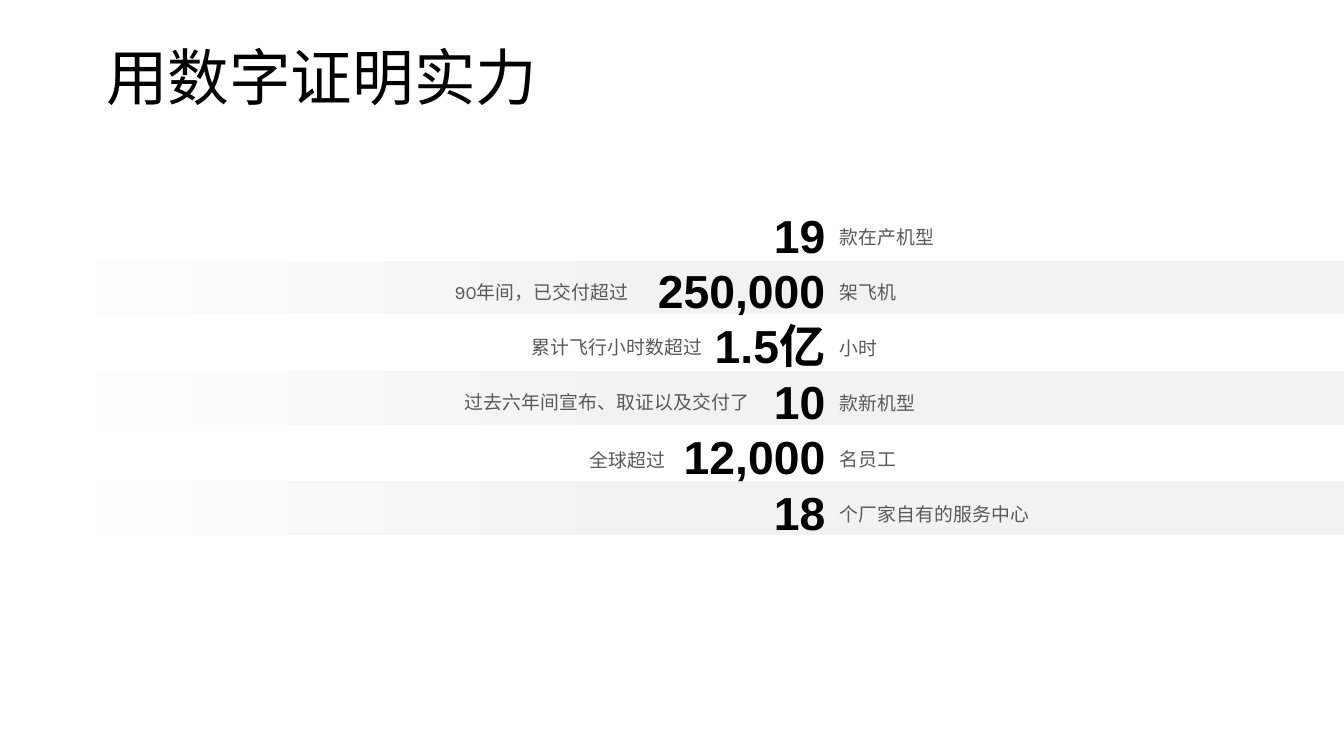
"""Build a slide of six key figures on alternating gradient bands."""
from pptx import Presentation
from pptx.dml.color import RGBColor
from pptx.enum.shapes import MSO_SHAPE
from pptx.enum.text import MSO_ANCHOR, MSO_AUTO_SIZE, PP_ALIGN
from pptx.util import Inches, Pt

RECT = MSO_SHAPE.RECTANGLE
TOP = MSO_ANCHOR.TOP
LEFT, RIGHT = PP_ALIGN.LEFT, PP_ALIGN.RIGHT
NO_FIT, GROW = MSO_AUTO_SIZE.NONE, MSO_AUTO_SIZE.SHAPE_TO_FIT_TEXT
COLORS = {"black": "000000", "gray": "595959", "band": "F2F2F2", "white": "FFFFFF"}

ROW_TOP, ROW_PITCH = 1.63, 2.06 / 5
FIGURES = ["19", "250,000", "1.5亿", "10", "12,000", "18"]
UNITS = ["款在产机型", "架飞机", "小时", "款新机型", "名员工", "个厂家自有的服务中心"]
UNIT_WIDTHS = [2.26] + [3.37] * 5
CAPTIONS = [
    ("90年间，已交付超过", 3.1, 2.04, 1.68, "Karla"),
    ("累计飞行小时数超过", 2.93, 2.45, 2.4, "Karla"),
    ("过去六年间宣布、取证以及交付了", 3.1, 2.86, 2.58, "Arial"),
    ("全球超过", 4.09, 3.29, 0.96, "Arial"),
]


def style(p, font, size, color, align, bold=False):
    p.alignment = align
    for r in p.runs:
        r.font.name = font
        r.font.size = Pt(size)
        r.font.bold = bold
        r.font.color.rgb = RGBColor.from_string(COLORS[color])


def add_label(text, left, top, width, font, align):
    tb = group.shapes.add_textbox(Inches(left), Inches(top), Inches(width), Inches(0.27))
    tf = tb.text_frame
    tf.text = text
    tf.word_wrap = True
    tf.auto_size = GROW
    style(tf.paragraphs[0], font, 10.13, "gray", align)


prs = Presentation()
prs.slide_width, prs.slide_height = Inches(10), Inches(10 * 9 / 16)
s = prs.slides.add_slide(prs.slide_layouts[5])

title = s.shapes.title
title.left, title.top = Inches(0.69), Inches(0.3)
title.width, title.height = Inches(8.62), Inches(1.09)
tf = title.text_frame
tf.text = "用数字证明实力"
tf.vertical_anchor = TOP
tf.auto_size = NO_FIT
tf.paragraphs[0].line_spacing = 0.9
style(tf.paragraphs[0], "Roboto", 33, "black", LEFT)

group = s.shapes.add_group_shape()
for i in range(3):
    band = group.shapes.add_shape(RECT, 0, Inches(1.94 + i * 0.82), Inches(10), Inches(0.4))
    band.shadow.inherit = False
    band.line.fill.background()
    band.fill.gradient()
    band.fill.gradient_angle = 180
    stops = [(0.5, "band"), (1, "white")]
    for stop, (position, color) in zip(band.fill.gradient_stops, stops):
        stop.position = position
        stop.color.rgb = RGBColor.from_string(COLORS[color])

figures = group.shapes.add_textbox(Inches(4.09), Inches(1.49), Inches(2.15), Inches(2.6))
tf = figures.text_frame
tf.text = "\n".join(FIGURES)
tf.word_wrap = True
tf.auto_size = GROW
for p in tf.paragraphs:
    p.line_spacing = Pt(29.7)
    style(p, "Arial", 24.8, "black", RIGHT, bold=True)

for text, left, top, width, font in CAPTIONS:
    add_label(text, left, top, width, font, RIGHT)

for row, (unit, width) in enumerate(zip(UNITS, UNIT_WIDTHS)):
    add_label(unit, 6.15, ROW_TOP + row * ROW_PITCH, width, "Arial", LEFT)

prs.save("out.pptx")
